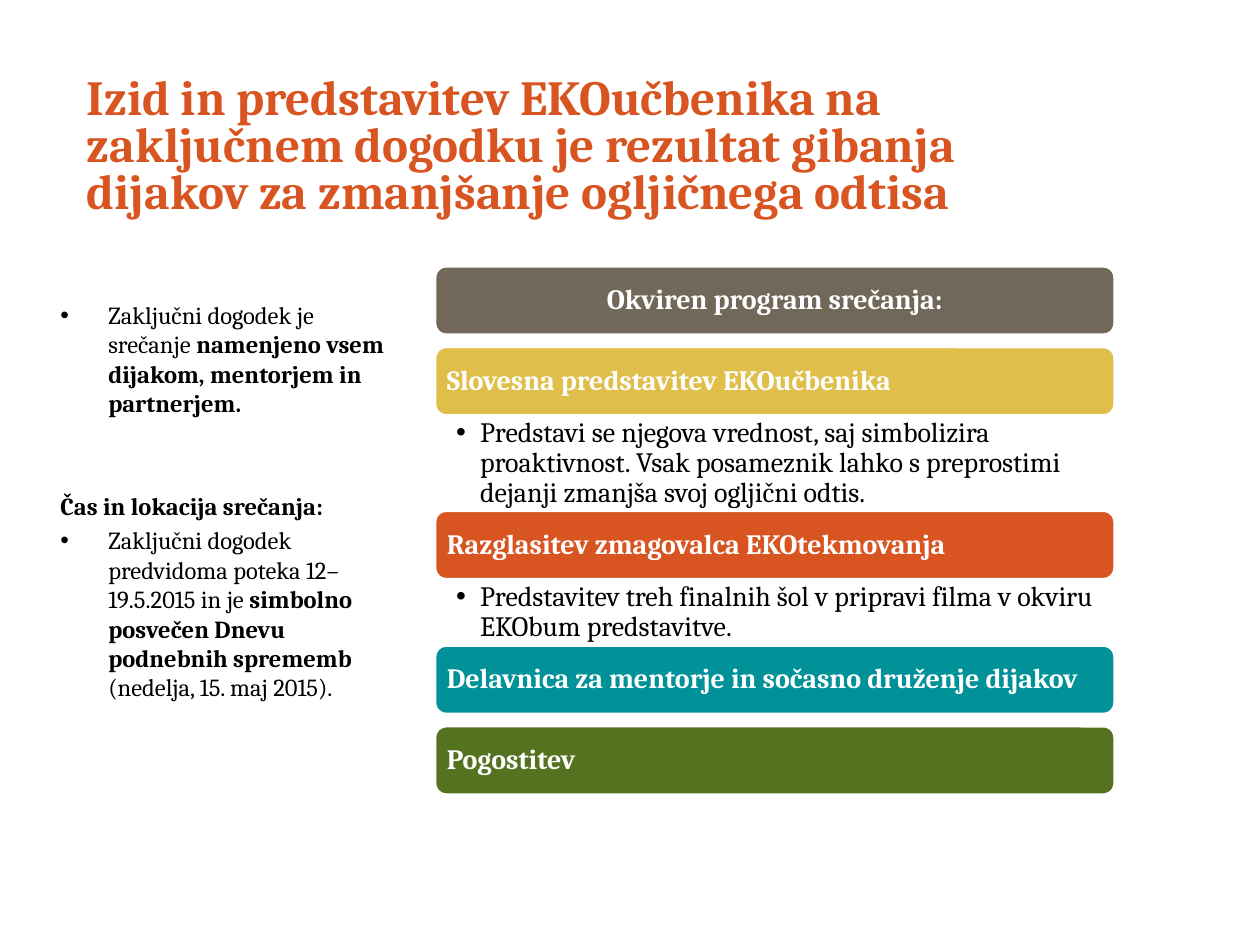
from dataclasses import dataclass

from lxml.etree import SubElement
from pptx import Presentation
from pptx.dml.color import RGBColor
from pptx.enum.shapes import MSO_SHAPE
from pptx.enum.text import MSO_ANCHOR, MSO_AUTO_SIZE, PP_ALIGN
from pptx.oxml.ns import qn
from pptx.util import Inches, Pt


@dataclass(frozen=True)
class Theme:
    font: str = "Cambria"
    text: str = "000000"
    light: str = "FFFFFF"
    gray: str = "71685A"
    yellow: str = "E0BE4A"
    orange: str = "D85421"
    teal: str = "009199"
    green: str = "557221"
    title_size: int = 28
    body_size: int = 14
    program_size: int = 16


THEME = Theme()
TITLE = (
    "Izid in predstavitev EKOučbenika na zaključnem dogodku je rezultat "
    "gibanja dijakov za zmanjšanje ogljičnega odtisa"
)
EVENT_NOTES = [
    (True, 0, [("Zaključni dogodek je srečanje ", False),
               ("namenjeno vsem dijakom, mentorjem in partnerjem.", True)]),
    (False, 42, [("Čas in lokacija srečanja:", True)]),
    (True, 2.8, [("Zaključni dogodek predvidoma poteka 12–19.5.2015 in je ", False),
                 ("simbolno posvečen Dnevu podnebnih sprememb ", True),
                 ("(nedelja, 15. maj 2015).", False)]),
]
PROGRAM = [
    ("Okviren program srečanja:", THEME.gray, PP_ALIGN.CENTER, None, 0),
    ("Slovesna predstavitev EKOučbenika", THEME.yellow, PP_ALIGN.LEFT,
     "Predstavi se njegova vrednost, saj simbolizira proaktivnost. Vsak "
     "posameznik lahko s preprostimi dejanji zmanjša svoj ogljični odtis.", 0.75),
    ("Razglasitev zmagovalca EKOtekmovanja", THEME.orange, PP_ALIGN.LEFT,
     "Predstavitev treh finalnih šol v pripravi filma v okviru EKObum "
     "predstavitve.", 0.52),
    ("Delavnica za mentorje in sočasno druženje dijakov", THEME.teal,
     PP_ALIGN.LEFT, None, 0),
    ("Pogostitev", THEME.green, PP_ALIGN.LEFT, None, 0),
]
BAR_HEIGHT = 0.55
BAR_GAP = 0.09


def place(shape, left, top, width, height):
    shape.left, shape.top = Inches(left), Inches(top)
    shape.width, shape.height = Inches(width), Inches(height)


def style_font(font, size, color, bold=None):
    font.name = THEME.font
    font.size = Pt(size)
    font.color.rgb = RGBColor.from_string(color)
    font.bold = bold


def set_margins(frame, left, top, right, bottom):
    frame.margin_left, frame.margin_top = Inches(left), Inches(top)
    frame.margin_right, frame.margin_bottom = Inches(right), Inches(bottom)


def set_bullet(paragraph, indent):
    properties = paragraph._p.get_or_add_pPr()
    properties.set("marL", str(Inches(indent)))
    properties.set("indent", str(-Inches(indent)))
    if indent:
        SubElement(properties, qn("a:buFont"), typeface="Arial")
        SubElement(properties, qn("a:buChar"), char="•")
    else:
        SubElement(properties, qn("a:buNone"))


def add_title(slide, left, top, width, height):
    title = slide.shapes.title
    place(title, left, top, width, height)
    frame = title.text_frame
    frame.text = TITLE
    frame.auto_size = MSO_AUTO_SIZE.NONE
    frame.vertical_anchor = MSO_ANCHOR.MIDDLE
    paragraph = frame.paragraphs[0]
    paragraph.alignment = PP_ALIGN.LEFT
    paragraph.line_spacing = 0.8
    style_font(paragraph.font, THEME.title_size, THEME.orange, True)


def add_event_notes(slide, left, top, width, height):
    body = slide.placeholders[1]
    place(body, left, top, width, height)
    frame = body.text_frame
    frame.auto_size = MSO_AUTO_SIZE.NONE
    for index, (bulleted, space_before, runs) in enumerate(EVENT_NOTES):
        paragraph = frame.add_paragraph() if index else frame.paragraphs[0]
        set_bullet(paragraph, 0.38 if bulleted else 0)
        paragraph.space_before = Pt(space_before)
        style_font(paragraph.font, THEME.body_size, THEME.text)
        for text, bold in runs:
            run = paragraph.add_run()
            run.text = text
            run.font.bold = bold


def add_bar(slide, text, color, alignment, left, top, width, height):
    bar = slide.shapes.add_shape(
        MSO_SHAPE.ROUNDED_RECTANGLE,
        Inches(left), Inches(top), Inches(width), Inches(height))
    bar.shadow.inherit = False
    bar.fill.solid()
    bar.fill.fore_color.rgb = RGBColor.from_string(color)
    bar.line.color.rgb = RGBColor.from_string(THEME.light)
    bar.line.width = Pt(2)
    frame = bar.text_frame
    frame.text = text
    frame.vertical_anchor = MSO_ANCHOR.MIDDLE
    set_margins(frame, 0.07, 0.07, 0.07, 0.07)
    paragraph = frame.paragraphs[0]
    paragraph.alignment = alignment
    paragraph.line_spacing = 0.9
    style_font(paragraph.font, THEME.program_size, THEME.light, True)


def add_detail(slide, text, left, top, width, height):
    detail = slide.shapes.add_textbox(
        Inches(left), Inches(top), Inches(width), Inches(height))
    frame = detail.text_frame
    frame.word_wrap = True
    frame.text = text
    set_margins(frame, 0.17, 0.02, 0.12, 0.02)
    paragraph = frame.paragraphs[0]
    set_bullet(paragraph, 0.19)
    paragraph.line_spacing = 0.9
    style_font(paragraph.font, THEME.program_size, THEME.text)


def add_program(slide, left, top, width):
    for text, color, alignment, detail, detail_height in PROGRAM:
        add_bar(slide, text, color, alignment, left, top, width, BAR_HEIGHT)
        top += BAR_HEIGHT
        if detail:
            add_detail(slide, detail, left, top, width, detail_height)
            top += detail_height
        else:
            top += BAR_GAP


def main():
    presentation = Presentation()
    presentation.slide_width = Inches(10)
    presentation.slide_height = Inches(7.5)
    slide = presentation.slides.add_slide(presentation.slide_layouts[1])
    add_title(slide, 0.59, 0.6, 7.39, 1.15)
    add_event_notes(slide, 0.38, 2.33, 2.85, 4.39)
    add_program(slide, 3.45, 2.11, 5.4)
    presentation.save("out.pptx")


if __name__ == "__main__":
    main()
